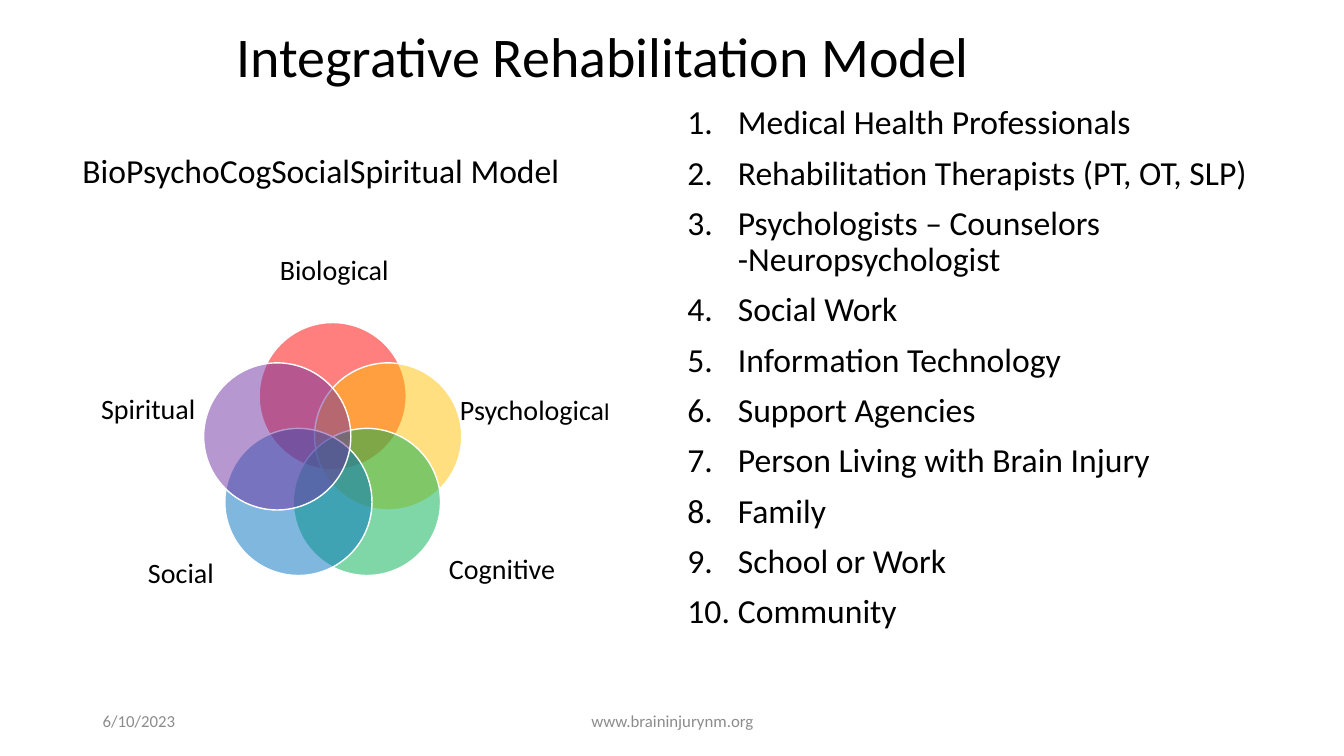
import math
from dataclasses import dataclass

import lxml.etree
import pptx
import pptx.dml.color
import pptx.enum.shapes
import pptx.enum.text
import pptx.oxml.ns
import pptx.util

PX = 9144  # EMU per px, 100 px to the inch
FONT = "Calibri"
COLOURS = {
    "text": "000000", "footer": "8C8C8C", "white": "FFFFFF",
    "red": "FF0000", "gold": "FFC000", "green": "00B050",
    "blue": "0070C0", "purple": "7030A0",
}
ALIGN = pptx.enum.text.PP_ALIGN
ANCHOR = pptx.enum.text.MSO_ANCHOR


@dataclass(frozen=True)
class Area:
    left: int
    top: int
    width: int
    height: int

    def emu(self) -> list[int]:
        return [side * PX for side in (self.left, self.top, self.width, self.height)]


@dataclass(frozen=True)
class Petal:
    colour: str
    label: list[tuple[str, int]]  # text and point size of each span
    label_area: Area


# Wording, petals clockwise from the top
PETALS = [
    Petal("red", [("Biological", 20)], Area(247, 220, 169, 98)),
    Petal("gold", [("Psychologica", 20), ("l", 17)], Area(424, 355, 213, 106)),
    Petal("green", [("Cognitive", 20)], Area(403, 513, 190, 106)),
    Petal("blue", [("Social", 20)], Area(101, 517, 157, 106)),
    Petal("purple", [("Spiritual", 20)], Area(63, 354, 168, 106)),
]
CENTRE_X, CENTRE_Y, ORBIT, DIAMETER = 330, 451, 58, 146
TEAM = [
    "Medical Health Professionals",
    "Rehabilitation Therapists (PT, OT, SLP)",
    "Psychologists – Counselors -Neuropsychologist",
    "Social Work",
    "Information Technology",
    "Support Agencies",
    "Person Living with Brain Injury",
    "Family",
    "School or Work",
    "Community",
]


def apply(target, values: dict) -> None:
    for name, value in values.items():
        setattr(target, name, value)


def colour(name: str):
    return pptx.dml.color.RGBColor.from_string(COLOURS[name])


def write(para, spans: list[tuple[str, int]], ink: str = "text") -> None:
    for text, size in spans:
        span = para.add_run()
        span.text = text
        apply(span.font, {"name": FONT, "size": pptx.util.Pt(size)})
        span.font.color.rgb = colour(ink)


def add_text(page, area: Area, spans: list[tuple[str, int]], ink: str = "text",
             frame_format: dict | None = None, para_format: dict | None = None):
    box = page.shapes.add_textbox(*area.emu())
    frame = box.text_frame
    apply(frame, {"word_wrap": True, **(frame_format or {})})
    apply(frame.paragraphs[0], para_format or {})
    write(frame.paragraphs[0], spans, ink)
    return box


def add_petal(page, petal: Petal, angle: float) -> None:
    left = round(CENTRE_X + ORBIT * math.sin(angle) - DIAMETER / 2)
    top = round(CENTRE_Y - ORBIT * math.cos(angle) - DIAMETER / 2)
    circle = page.shapes.add_shape(
        pptx.enum.shapes.MSO_SHAPE.OVAL, *Area(left, top, DIAMETER, DIAMETER).emu())
    circle.shadow.inherit = False
    circle.fill.solid()
    circle.fill.fore_color.rgb = colour(petal.colour)
    solid = circle.fill._xPr.find(pptx.oxml.ns.qn("a:solidFill"))
    lxml.etree.SubElement(solid[0], pptx.oxml.ns.qn("a:alpha"), val="50000")
    circle.line.color.rgb = colour("white")
    circle.line.width = pptx.util.Pt(1)
    margins = dict.fromkeys(
        ["margin_left", "margin_top", "margin_right", "margin_bottom"], 0)
    add_text(page, petal.label_area, petal.label,
             frame_format={"vertical_anchor": ANCHOR.MIDDLE, **margins},
             para_format={"alignment": ALIGN.CENTER, "line_spacing": 0.9})


def add_team(page, area: Area) -> None:
    frame = page.shapes.add_textbox(*area.emu()).text_frame
    frame.word_wrap = True
    indent = 50 * PX
    for index, member in enumerate(TEAM):
        para = frame.add_paragraph() if index else frame.paragraphs[0]
        apply(para, {"line_spacing": 0.9,
                     "space_before": pptx.util.Pt(10 if index else 0)})
        properties = para._p.get_or_add_pPr()
        properties.set("marL", str(indent))
        properties.set("indent", str(-indent))
        lxml.etree.SubElement(
            properties, pptx.oxml.ns.qn("a:buAutoNum"), type="arabicPeriod")
        write(para, [(member, 24)])


def main() -> None:
    deck = pptx.Presentation()
    apply(deck, {"slide_width": 1333 * PX, "slide_height": 750 * PX})
    page = deck.slides.add_slide(deck.slide_layouts[6])
    middle = {"vertical_anchor": ANCHOR.MIDDLE}

    # Title
    title = add_text(page, Area(225, 17, 759, 83),
                     [("Integrative Rehabilitation Model", 40)],
                     frame_format=middle, para_format={"line_spacing": 0.9})
    title.fill.solid()
    title.fill.fore_color.rgb = colour("white")

    # Five overlapping petals
    for index, petal in enumerate(PETALS):
        add_petal(page, petal, math.tau * index / len(PETALS))

    # Numbered team and model name
    add_team(page, Area(672, 100, 612, 591))
    add_text(page, Area(72, 144, 507, 50), [("BioPsychoCogSocialSpiritual Model", 24)])

    # Footer
    add_text(page, Area(92, 695, 300, 40), [("6/10/2023", 12)], "footer", middle)
    add_text(page, Area(442, 695, 450, 40), [("www.braininjurynm.org", 12)], "footer",
             middle, {"alignment": ALIGN.CENTER})

    deck.save("out.pptx")


if __name__ == "__main__":
    main()
